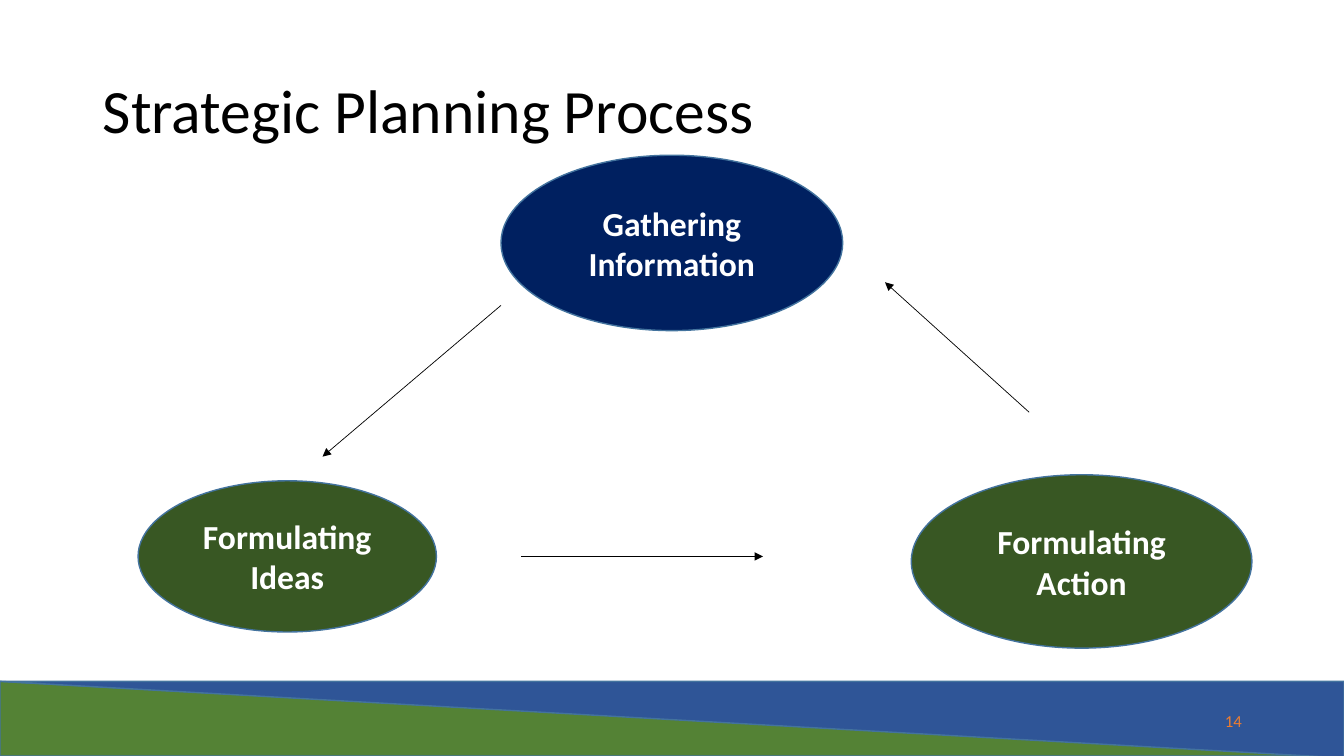
import collections
import dataclasses

import pptx
import pptx.dml.color
import pptx.enum.shapes
import pptx.enum.text
import pptx.oxml
import pptx.oxml.ns
import pptx.util

Pt = pptx.util.Pt
Shapes = pptx.enum.shapes.MSO_SHAPE
Align = pptx.enum.text.PP_ALIGN
Box = collections.namedtuple("Box", "left top width height")


@dataclasses.dataclass(frozen=True)
class Theme:
    """Colours, font and type sizes of the deck."""
    font: str = "Calibri"
    black: str = "000000"
    white: str = "FFFFFF"
    navy: str = "002060"
    dark_green: str = "385723"
    green: str = "548235"
    blue: str = "2F5597"
    outline: str = "43739E"
    orange: str = "ED7D31"
    title_size: int = 44
    step_size: int = 24
    number_size: int = 12


THEME = Theme()


def colour(value):
    """Turn a hex string into an RGB colour."""
    return pptx.dml.color.RGBColor.from_string(value)


def lengths(box):
    """Give the four lengths of a box in points."""
    return [Pt(value) for value in box]


def write(shape, text, size, tint, align, bold=False):
    """Set one vertically centred paragraph in a shape."""
    frame = shape.text_frame
    frame.word_wrap = True
    frame.vertical_anchor = pptx.enum.text.MSO_ANCHOR.MIDDLE
    frame.text = text
    para = frame.paragraphs[0]
    para.alignment = align
    for span in para.runs:
        span.font.name = THEME.font
        span.font.size = Pt(size)
        span.font.bold = bold
        span.font.color.rgb = colour(tint)
    return para


def add_filled(page, kind, box, fill):
    """Add an outlined preset shape without shadow."""
    shape = page.shapes.add_shape(kind, *lengths(box))
    shape.shadow.inherit = False
    shape.fill.solid()
    shape.fill.fore_color.rgb = colour(fill)
    shape.line.color.rgb = colour(THEME.outline)
    shape.line.width = Pt(1)
    return shape


def add_arrow(page, start, end):
    """Add a thin black arrow from start to end."""
    arrow = page.shapes.add_connector(
        pptx.enum.shapes.MSO_CONNECTOR.STRAIGHT, *lengths(start + end))
    arrow.line.color.rgb = colour(THEME.black)
    arrow.line.width = Pt(0.5)
    head = pptx.oxml.parse_xml(
        f'<a:tailEnd {pptx.oxml.ns.nsdecls("a")} type="triangle"/>')
    arrow.line._get_or_add_ln().append(head)
    arrow._element.spPr.append(pptx.oxml.parse_xml(
        f'<a:effectLst {pptx.oxml.ns.nsdecls("a")}/>'))


def add_title(page, box, text):
    """Place and format the title placeholder."""
    title = page.shapes.title
    title.left, title.top, title.width, title.height = lengths(box)
    para = write(title, text, THEME.title_size, THEME.black, Align.LEFT)
    para.line_spacing = 0.9


def add_footer(page, box, number):
    """Draw the two-wedge band with the page number."""
    add_filled(page, Shapes.RIGHT_TRIANGLE, box, THEME.green)
    upper = add_filled(page, Shapes.RIGHT_TRIANGLE,
                       box._replace(height=box.height + 1.4), THEME.blue)
    upper.rotation = 180
    number_box = Box(box.left + box.width - 281.76, box.top + 13.7, 216, 28.8)
    label = page.shapes.add_textbox(*lengths(number_box))
    write(label, number, THEME.number_size, THEME.orange, Align.RIGHT)


def add_cycle(page, box):
    """Draw the three planning steps and the arrows joining them."""
    steps = [
        ("Gathering Information", Box(261.84, 2.88, 244.08, 125.28), THEME.navy),
        ("Formulating Ideas", Box(2.64, 235.44, 213.12, 108), THEME.dark_green),
        ("Formulating Action", Box(554.88, 231.12, 243.36, 123.84), THEME.dark_green),
    ]
    arrows = [
        ((261.84, 110.16), (134.4, 218.16)),
        ((639.12, 186.48), (536.16, 93.6)),
        ((276.24, 289.44), (449.04, 289.44)),
    ]
    for text, place, fill in steps:
        placed = place._replace(left=box.left + place.left, top=box.top + place.top)
        oval = add_filled(page, Shapes.OVAL, placed, fill)
        write(oval, text, THEME.step_size, THEME.white, Align.CENTER, bold=True)
    for ends in arrows:
        add_arrow(page, *((box.left + x, box.top + y) for x, y in ends))


def main():
    """Build the deck and save it."""
    deck = pptx.Presentation()
    deck.slide_width, deck.slide_height = Pt(960), Pt(540)
    page = deck.slides.add_slide(deck.slide_layouts[5])
    add_title(page, Box(66.24, 28.8, 828, 104.4), "Strategic Planning Process")
    add_footer(page, Box(0, 486.7, 960, 53.3), "14")
    add_cycle(page, Box(96, 108, 800, 356))
    deck.save("out.pptx")


if __name__ == "__main__":
    main()
